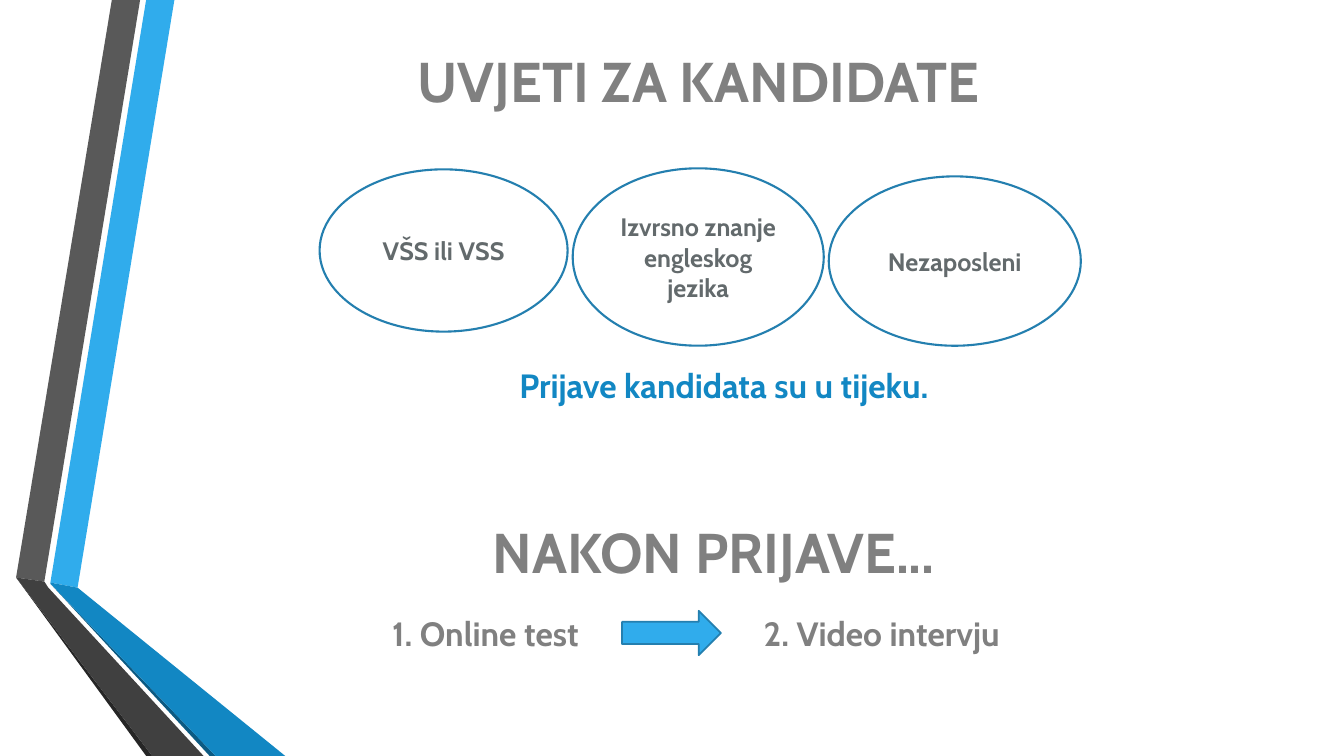
import pptx
import pptx.util
import pptx.dml.color
import pptx.enum.shapes
import pptx.enum.text

RGB = pptx.dml.color.RGBColor
SKY = RGB(0x30, 0xAC, 0xEC)
BLUE = RGB(0x12, 0x87, 0xC3)
NAVY = RGB(0x0C, 0x5A, 0x82)
EDGE = RGB(0x24, 0x7F, 0xAF)
GREY = RGB(0x80, 0x80, 0x80)
SLATE = RGB(0x63, 0x6A, 0x6C)
STONE = RGB(0x59, 0x59, 0x59)
COAL = RGB(0x40, 0x40, 0x40)
INK = RGB(0x26, 0x26, 0x26)
KIND = pptx.enum.shapes.MSO_SHAPE
PX = 9144  # 100 px to the inch


class Deck:
    def __init__(self, wide, high):
        self.deck = pptx.Presentation()
        self.deck.slide_width = wide * PX
        self.deck.slide_height = high * PX
        self.slide = self.deck.slides.add_slide(self.deck.slide_layouts[6])
        self.font = {"name": "Cabin", "bold": True}
        self.frame = {"word_wrap": True,
                      "vertical_anchor": pptx.enum.text.MSO_ANCHOR.MIDDLE}

    def style(self, item, values):
        for name, value in values.items():
            setattr(item, name, value)

    def paint(self, shape, fill=None, edge=None, width=1):
        shape.shadow.inherit = False
        if fill is None:
            shape.fill.background()
        else:
            shape.fill.solid()
            shape.fill.fore_color.rgb = fill
        if edge is None:
            shape.line.fill.background()
        else:
            shape.line.color.rgb = edge
            shape.line.width = pptx.util.Pt(width)

    def label(self, shape, text, size, color):
        self.style(shape.text_frame, self.frame)
        line = shape.text_frame.paragraphs[0]
        line.alignment = pptx.enum.text.PP_ALIGN.CENTER
        run = line.add_run()
        run.text = text
        self.style(run.font, {**self.font, "size": pptx.util.Pt(size)})
        run.font.color.rgb = color

    def text(self, box, text, size, color):
        shape = self.slide.shapes.add_textbox(*[n * PX for n in box])
        self.label(shape, text, size, color)

    def shape(self, kind, box, **look):
        shape = self.slide.shapes.add_shape(kind, *[n * PX for n in box])
        self.paint(shape, **look)
        return shape

    def band(self, fill, start, *rest):
        pen = self.slide.shapes.build_freeform(*start, scale=PX)
        pen.add_line_segments(rest, close=True)
        self.paint(pen.convert_to_shape(), fill)


def main():
    deck = Deck(1333, 750)

    # Folded ribbons on the left
    deck.band(SKY, (50, 578), (77, 583), (173, 0), (145, 0))
    deck.band(STONE, (139, 0), (111, 0), (16, 573), (44, 577))
    deck.band(INK, (16, 573), (145, 750), (151, 750))
    deck.band(NAVY, (50, 579), (208, 750), (214, 750))
    deck.band(BLUE, (50, 578), (50, 579), (214, 750), (283, 750), (77, 583))
    deck.band(COAL, (16, 573), (151, 750), (202, 750), (48, 583), (44, 577))

    # Terms for candidates
    deck.text((145, 29, 1096, 100), "UVJETI ZA KANDIDATE", 40, GREY)
    for box, term in (
        ((317, 168, 246, 161), "VŠS ili VSS"),
        ((568, 167, 249, 176), "Izvrsno znanje engleskog jezika"),
        ((822, 175, 250, 168), "Nezaposleni"),
    ):
        oval = deck.shape(KIND.OVAL, box, edge=EDGE, width=1.5)
        deck.label(oval, term, 18, SLATE)
    deck.text((468, 352, 500, 60), "Prijave kandidata su u tijeku.", 24, BLUE)

    # Steps after applying
    deck.text((411, 488, 594, 117), "NAKON PRIJAVE...", 40, GREY)
    deck.text((324, 532, 315, 193), "1. Online test", 24, GREY)
    deck.text((692, 532, 365, 193), "2. Video intervju", 24, GREY)
    deck.shape(KIND.RIGHT_ARROW, (617, 606, 98, 44),
               fill=SKY, edge=EDGE, width=1.25)

    deck.deck.save("out.pptx")


if __name__ == "__main__":
    main()
